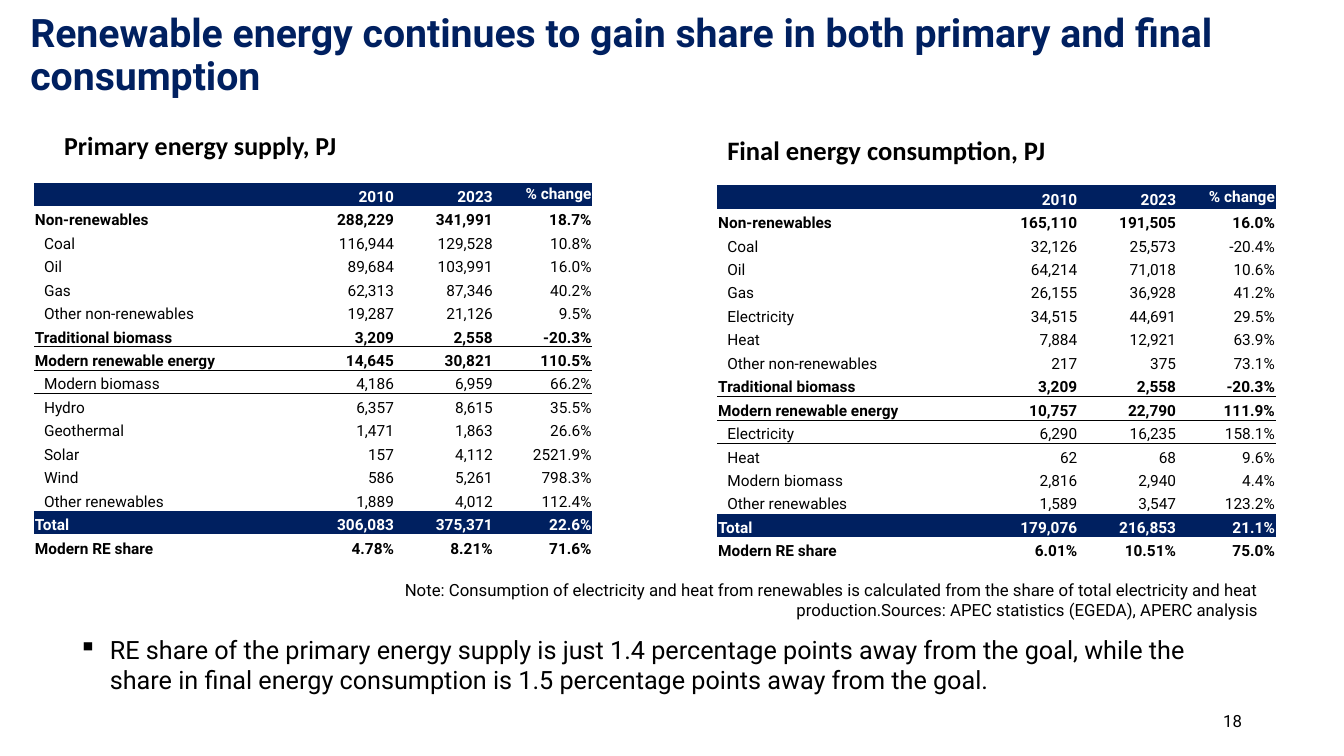
from dataclasses import dataclass

from lxml import etree
from pptx import Presentation
from pptx import util as u
from pptx.dml import color
from pptx.enum import text
from pptx.oxml import ns


@dataclass(frozen=True)
class Theme:
    navy: str = "002060"
    black: str = "000000"
    white: str = "FFFFFF"
    body_font: str = "Roboto"
    heading_font: str = "Calibri"
    title_size: float = 28
    heading_size: float = 19
    bullet_size: float = 18
    note_size: float = 12
    table_size: float = 11
    rule_width: float = 0.5


LEFT, RIGHT = text.PP_ALIGN.LEFT, text.PP_ALIGN.RIGHT
TOP, MIDDLE, BOTTOM = text.MSO_ANCHOR.TOP, text.MSO_ANCHOR.MIDDLE, text.MSO_ANCHOR.BOTTOM
NO_GRID_STYLE = "{2D5ABB26-0587-4C30-8999-92F81FD0307C}"

HEADER = ("", "2010", "2023", "% change")
COLUMN_WIDTHS = (6.6, 2.49, 2.49, 2.49)
TABLE_HEIGHT = 9.47
BOLD_ROWS = {"Non-renewables", "Traditional biomass", "Modern renewable energy",
             "Total", "Modern RE share"}
RULED_ROW = "Modern renewable energy"

PRIMARY_SUPPLY = [
    ("Non-renewables", "288,229", "341,991", "18.7%"),
    ("Coal", "116,944", "129,528", "10.8%"),
    ("Oil", "89,684", "103,991", "16.0%"),
    ("Gas", "62,313", "87,346", "40.2%"),
    ("Other non-renewables", "19,287", "21,126", "9.5%"),
    ("Traditional biomass", "3,209", "2,558", "-20.3%"),
    ("Modern renewable energy", "14,645", "30,821", "110.5%"),
    ("Modern biomass", "4,186", "6,959", "66.2%"),
    ("Hydro", "6,357", "8,615", "35.5%"),
    ("Geothermal", "1,471", "1,863", "26.6%"),
    ("Solar", "157", "4,112", "2521.9%"),
    ("Wind", "586", "5,261", "798.3%"),
    ("Other renewables", "1,889", "4,012", "112.4%"),
    ("Total", "306,083", "375,371", "22.6%"),
    ("Modern RE share", "4.78%", "8.21%", "71.6%"),
]
FINAL_CONSUMPTION = [
    ("Non-renewables", "165,110", "191,505", "16.0%"),
    ("Coal", "32,126", "25,573", "-20.4%"),
    ("Oil", "64,214", "71,018", "10.6%"),
    ("Gas", "26,155", "36,928", "41.2%"),
    ("Electricity", "34,515", "44,691", "29.5%"),
    ("Heat", "7,884", "12,921", "63.9%"),
    ("Other non-renewables", "217", "375", "73.1%"),
    ("Traditional biomass", "3,209", "2,558", "-20.3%"),
    ("Modern renewable energy", "10,757", "22,790", "111.9%"),
    ("Electricity", "6,290", "16,235", "158.1%"),
    ("Heat", "62", "68", "9.6%"),
    ("Modern biomass", "2,816", "2,940", "4.4%"),
    ("Other renewables", "1,589", "3,547", "123.2%"),
    ("Total", "179,076", "216,853", "21.1%"),
    ("Modern RE share", "6.01%", "10.51%", "75.0%"),
]


def assign(target, values):
    for name, value in values.items():
        setattr(target, name, value)


class SlideBuilder:
    def __init__(self, presentation, theme):
        self.theme = theme
        self.slide = presentation.slides.add_slide(presentation.slide_layouts[5])

    def add_text(self, paragraph, content, size, font=None, ink=None, bold=False, **layout):
        assign(paragraph, layout)
        run = paragraph.add_run()
        run.text = content
        assign(run.font, {"name": font or self.theme.body_font,
                          "size": u.Pt(size), "bold": bold})
        run.font.color.rgb = color.RGBColor.from_string(ink or self.theme.black)

    def indent(self, paragraph, margin, first_line=0.0):
        properties = paragraph._p.get_or_add_pPr()
        properties.set("marL", str(u.Cm(margin)))
        properties.set("indent", str(u.Cm(first_line)))
        return properties

    def title(self, content, box):
        shape = self.slide.shapes.title
        assign(shape, dict(zip(("left", "top", "width", "height"), map(u.Cm, box))))
        assign(shape.text_frame, {"word_wrap": True, "vertical_anchor": MIDDLE,
                                  "auto_size": text.MSO_AUTO_SIZE.NONE})
        paragraph = shape.text_frame.paragraphs[0]
        self.indent(paragraph, 0.51)
        self.add_text(paragraph, content, self.theme.title_size, ink=self.theme.navy,
                      bold=True, alignment=LEFT, line_spacing=0.9)

    def text_box(self, content, box, size, anchor=MIDDLE, bullet=None, **style):
        frame = self.slide.shapes.add_textbox(*map(u.Cm, box)).text_frame
        assign(frame, {"word_wrap": True, "vertical_anchor": anchor})
        paragraph = frame.paragraphs[0]
        if bullet:
            frame.auto_size = text.MSO_AUTO_SIZE.SHAPE_TO_FIT_TEXT
            properties = self.indent(paragraph, 0.79, -0.79)
            etree.SubElement(properties, ns.qn("a:buChar"), char=bullet)
        self.add_text(paragraph, content, size, **style)

    def rule(self, cell, edge):
        line = etree.SubElement(cell._tc.get_or_add_tcPr(), ns.qn(f"a:ln{edge}"),
                                w=str(u.Pt(self.theme.rule_width)))
        fill = etree.SubElement(line, ns.qn("a:solidFill"))
        etree.SubElement(fill, ns.qn("a:srgbClr"), val=self.theme.black)

    def cell(self, cell, content, edges, filled, bold, indented, **layout):
        for edge in edges:
            self.rule(cell, edge)
        if filled:
            cell.fill.solid()
            cell.fill.fore_color.rgb = color.RGBColor.from_string(self.theme.navy)
        else:
            cell.fill.background()
        assign(cell, {"margin_left": u.Cm(0.25 if indented else 0.02),
                      "margin_right": u.Cm(0.02), "margin_top": u.Cm(0.02),
                      "margin_bottom": 0, "vertical_anchor": BOTTOM})
        paragraph = cell.text_frame.paragraphs[0]
        if content:
            self.add_text(paragraph, content, self.theme.table_size, bold=bold,
                          ink=self.theme.white if filled else self.theme.black, **layout)
        else:
            etree.SubElement(paragraph._p, ns.qn("a:endParaRPr"),
                             sz=str(self.theme.table_size * 100))

    def energy_table(self, records, left, top):
        rows = [HEADER, *records]
        frame = self.slide.shapes.add_table(
            len(rows), len(HEADER), u.Cm(left), u.Cm(top),
            u.Cm(sum(COLUMN_WIDTHS)), u.Cm(TABLE_HEIGHT))
        table = frame.table
        assign(table, {"first_row": False, "horz_banding": False})
        table._tbl.tblPr.find(ns.qn("a:tableStyleId")).text = NO_GRID_STYLE
        for column, width in zip(table.columns, COLUMN_WIDTHS):
            column.width = u.Cm(width)

        # Rules above and below the modern renewables row
        ruled = [row[0] for row in rows].index(RULED_ROW)
        edges = {ruled - 1: "B", ruled: "TB", ruled + 1: "T"}
        for i, row in enumerate(rows):
            label = row[0]
            filled = row is HEADER or label == "Total"
            bold = row is HEADER or label in BOLD_ROWS
            for j, content in enumerate(row):
                self.cell(table.cell(i, j), content, edges.get(i, ""), filled, bold,
                          indented=j == 0 and not bold, alignment=RIGHT if j else LEFT)
        table.cell(0, len(HEADER) - 1).vertical_anchor = MIDDLE


def main():
    presentation = Presentation()
    assign(presentation, {"slide_width": u.Cm(33.87), "slide_height": u.Cm(19.05)})
    theme = Theme()
    builder = SlideBuilder(presentation, theme)

    # Title
    builder.title("Renewable energy continues to gain share in both primary and final "
                  "consumption", (0, 0, 33.87, 2.84))

    # Table headings
    heading = {"font": theme.heading_font, "bold": True}
    builder.text_box("Primary energy supply, PJ", (1.37, 3.28, 9.3, 0.91),
                     theme.heading_size - 0.5, line_spacing=0.8, space_after=u.Pt(6), **heading)
    builder.text_box("Final energy consumption, PJ", (18.08, 3.28, 10.52, 0.91),
                     theme.heading_size, line_spacing=1.1, **heading)

    # Energy tables
    builder.energy_table(PRIMARY_SUPPLY, 0.86, 4.6)
    builder.energy_table(FINAL_CONSUMPTION, 18.08, 4.67)

    # Note, key message and page number
    builder.text_box("Note: Consumption of electricity and heat from renewables is calculated "
                     "from the share of total electricity and heat production.Sources: APEC "
                     "statistics (EGEDA), APERC analysis", (7.32, 14.4, 24.64, 1.45),
                     theme.note_size, alignment=RIGHT, space_after=u.Pt(6))
    builder.text_box("RE share of the primary energy supply is just 1.4 percentage points away "
                     "from the goal, while the share in final energy consumption is 1.5 "
                     "percentage points away from the goal.", (1.73, 15.85, 28.52, 1.8),
                     theme.bullet_size, anchor=TOP, bullet="▪")
    builder.text_box("18", (23.93, 17.65, 7.62, 1.02), theme.note_size, alignment=RIGHT)

    presentation.save("out.pptx")


if __name__ == "__main__":
    main()
